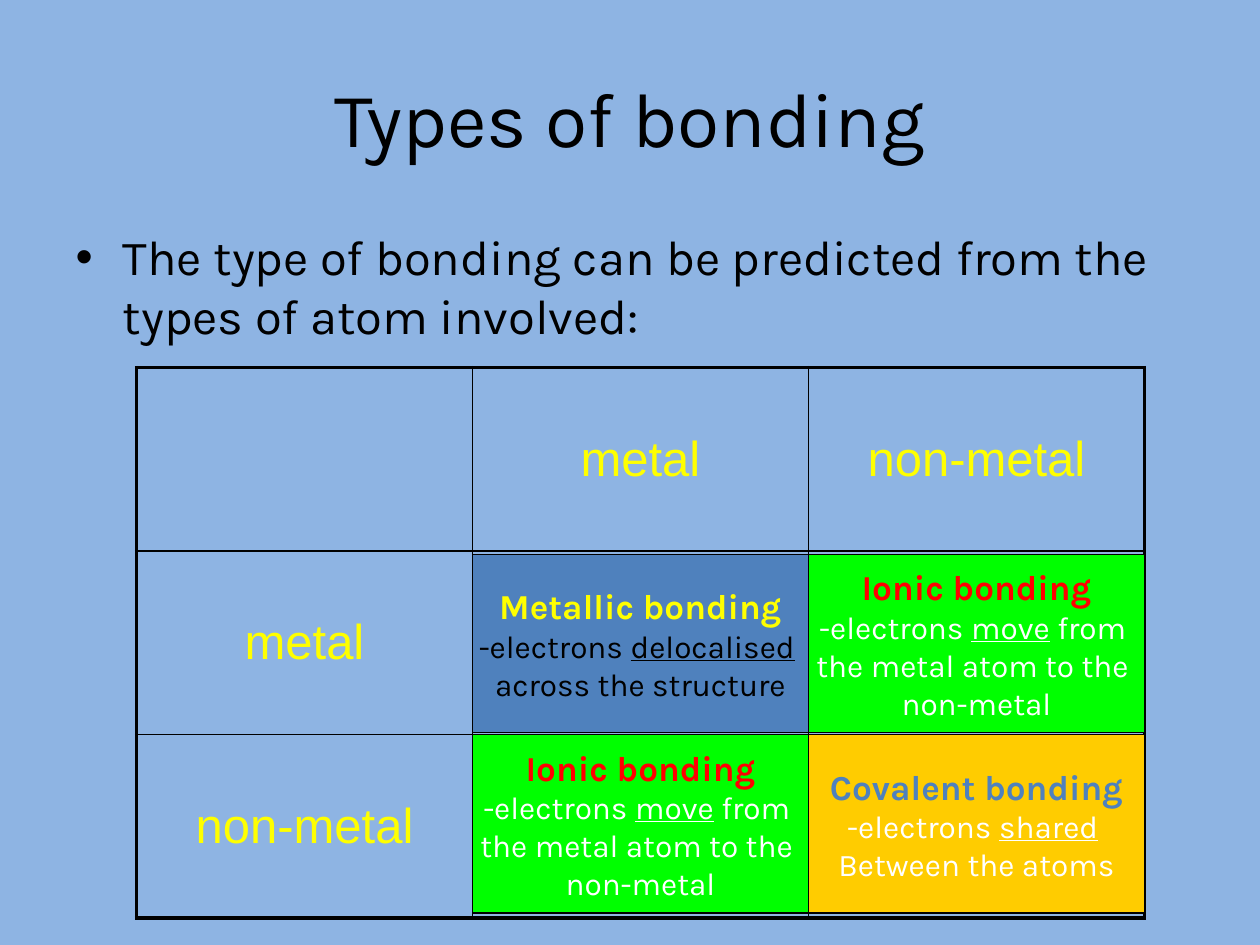
import pptx
import pptx.dml.color
import pptx.enum.shapes
import pptx.enum.text
import pptx.oxml
import pptx.oxml.ns
import pptx.util

Pt = pptx.util.Pt
RGBColor = pptx.dml.color.RGBColor
PP_ALIGN = pptx.enum.text.PP_ALIGN
MSO_ANCHOR = pptx.enum.text.MSO_ANCHOR

SKY = RGBColor(0x8E, 0xB4, 0xE3)
BLACK = RGBColor(0, 0, 0)
WHITE = RGBColor(0xFF, 0xFF, 0xFF)
YELLOW = RGBColor(0xFF, 0xFF, 0)
RED = RGBColor(0xFF, 0, 0)
BLUE = RGBColor(0x4F, 0x81, 0xBD)
GREEN = RGBColor(0, 0xFF, 0)
GOLD = RGBColor(0xFF, 0xCC, 0)

THICK, THIN = 2.25, 1
GRID_LEFT, GRID_TOP = 78, 210
COLUMN, ROW = 192, 104.9
BOX_TOP, BOX_STEP, BOX_HEIGHT = 316.8, 103, 102

ATOM_GRID = [
    ["", "metal", "non-metal"],
    ["metal", "", ""],
    ["non-metal", "", ""],
]

# Each line of a box is a list of runs; the second run is underlined.
METALLIC = ("Metallic bonding",
            [["-electrons ", "delocalised", " "], ["across the structure"]],
            BLUE, YELLOW, BLACK)
IONIC = ("Ionic bonding",
         [["-electrons ", "move", " from "], ["the metal atom to the "], ["non-metal"]],
         GREEN, RED, WHITE)
COVALENT = ("Covalent bonding",
            [["-electrons ", "shared", " "], ["Between the atoms"]],
            GOLD, BLUE, WHITE)
BONDS = [[METALLIC, IONIC], [IONIC, COVALENT]]


class BondingSlide:
    heading_font = "Karla"
    grid_font = "Arial"

    def __init__(self, deck):
        self.slide = deck.slides.add_slide(deck.slide_layouts[1])
        background = self.slide.background.fill
        background.solid()
        background.fore_color.rgb = SKY

    def add_run(self, paragraph, wording, color, **format_values):
        run = paragraph.add_run()
        run.text = wording
        run.font.color.rgb = color
        for attribute, value in format_values.items():
            setattr(run.font, attribute, value)

    def fill_placeholder(self, index, wording, size, place):
        placeholder = self.slide.placeholders[index]
        for side, length in zip(("left", "top", "width", "height"), place):
            setattr(placeholder, side, Pt(length))
        placeholder.text_frame.auto_size = pptx.enum.text.MSO_AUTO_SIZE.NONE
        self.add_run(placeholder.text_frame.paragraphs[0], wording, BLACK,
                     size=Pt(size), name=self.heading_font)

    def add_borders(self, cell, widths):
        """Draw black cell borders; widths maps L, R, T and B to points."""
        properties = cell._tc.get_or_add_tcPr()
        for side, width in widths.items():
            properties.append(pptx.oxml.parse_xml(
                f'<a:ln{side} {pptx.oxml.ns.nsdecls("a")} w="{Pt(width)}">'
                f'<a:solidFill><a:srgbClr val="{BLACK}"/></a:solidFill></a:ln{side}>'))

    def add_grid(self, rows):
        count = len(rows)
        table = self.slide.shapes.add_table(
            count, count, Pt(GRID_LEFT), Pt(GRID_TOP),
            Pt(count * COLUMN), Pt(count * ROW)).table
        table.first_row = table.horz_banding = False
        last = count - 1
        for r, row in enumerate(rows):
            table.rows[r].height = Pt(ROW)
            for c, wording in enumerate(row):
                cell = table.cell(r, c)
                self.add_borders(cell, {
                    "L": THICK if c == 0 else THIN,
                    "R": THICK if c == last else THIN,
                    "T": THICK if r == 0 else THIN,
                    "B": THICK if r == last else THIN,
                })
                cell.fill.background()
                if wording:
                    cell.vertical_anchor = MSO_ANCHOR.MIDDLE
                    paragraph = cell.text_frame.paragraphs[0]
                    paragraph.alignment = PP_ALIGN.CENTER
                    paragraph.space_before = Pt(5.6)
                    self.add_run(paragraph, wording, YELLOW,
                                 size=Pt(28), name=self.grid_font)

    def add_bond_box(self, left, top, bond):
        heading, lines, fill_color, heading_color, text_color = bond
        box = self.slide.shapes.add_shape(
            pptx.enum.shapes.MSO_SHAPE.RECTANGLE,
            Pt(left), Pt(top), Pt(COLUMN), Pt(BOX_HEIGHT))
        box.shadow.inherit = False
        box.fill.solid()
        box.fill.fore_color.rgb = fill_color
        box.line.color.rgb = BLACK
        box.line.width = Pt(0.75)
        frame = box.text_frame
        frame.word_wrap = False
        frame.vertical_anchor = MSO_ANCHOR.MIDDLE
        paragraph = frame.paragraphs[0]
        paragraph.alignment = PP_ALIGN.CENTER
        self.add_run(paragraph, heading, heading_color,
                     size=Pt(20), name=self.heading_font, bold=True)
        for line in lines:
            paragraph = frame.add_paragraph()
            paragraph.alignment = PP_ALIGN.CENTER
            for position, wording in enumerate(line):
                self.add_run(paragraph, wording, text_color, size=Pt(18),
                             name=self.heading_font, underline=position == 1)


def main():
    deck = pptx.Presentation()
    deck.slide_width, deck.slide_height = Pt(720), Pt(540)
    bonding = BondingSlide(deck)
    bonding.fill_placeholder(0, "Types of bonding", 44, (36, 21.6, 648, 90))
    bonding.fill_placeholder(
        1, "The type of bonding can be predicted from the types of atom involved:",
        28, (36, 126, 660, 356.4))
    bonding.add_grid(ATOM_GRID)
    for r, row in enumerate(BONDS):
        for c, bond in enumerate(row):
            bonding.add_bond_box(GRID_LEFT + (c + 1) * COLUMN, BOX_TOP + r * BOX_STEP, bond)
    deck.save("out.pptx")


if __name__ == "__main__":
    main()
